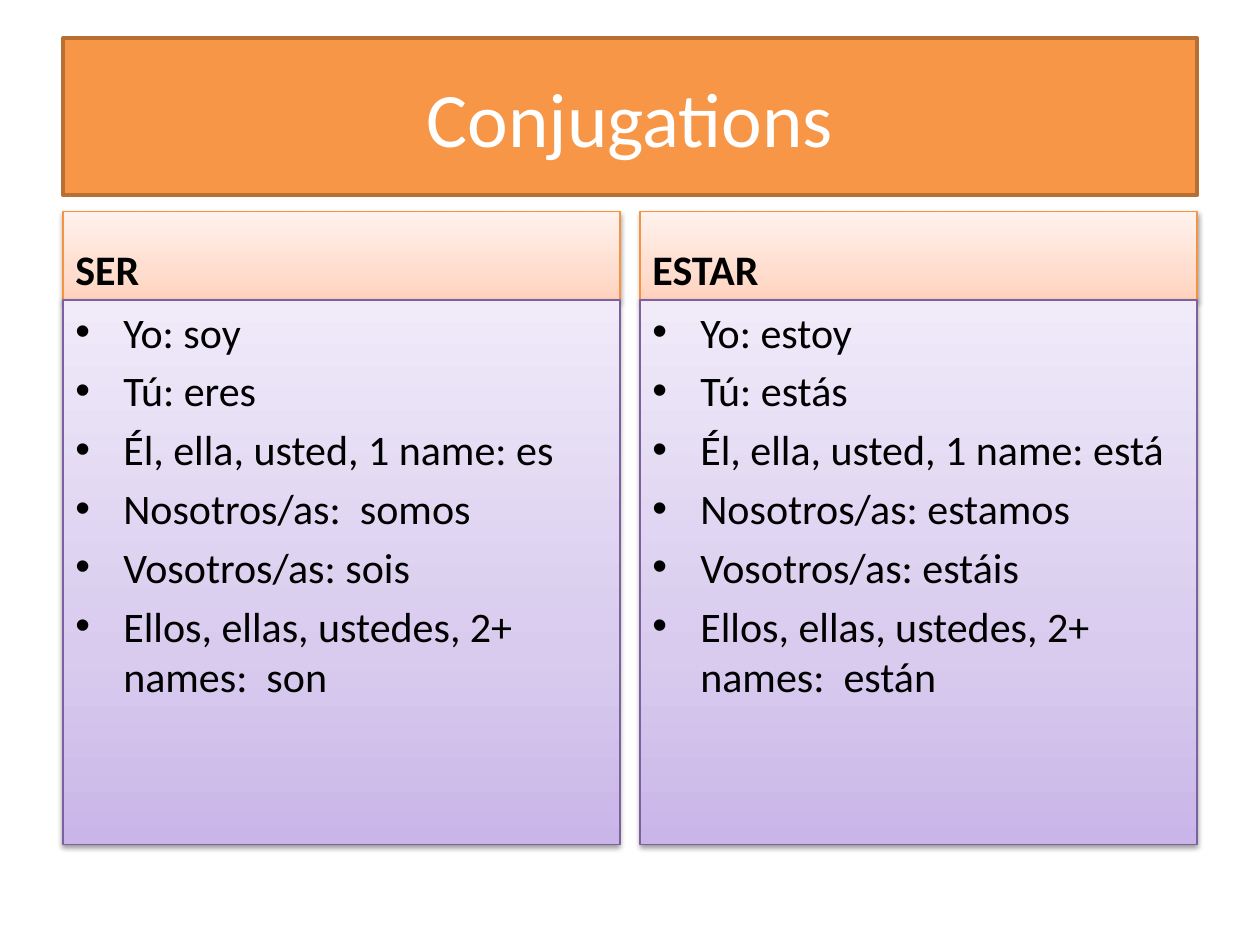
import pptx
import pptx.dml.color
import pptx.enum.shapes
import pptx.enum.text
import pptx.oxml
import pptx.oxml.ns
import pptx.util

Inches = pptx.util.Inches
Pt = pptx.util.Pt
RGBColor = pptx.dml.color.RGBColor
ALIGN = pptx.enum.text.PP_ALIGN
ANCHOR = pptx.enum.text.MSO_ANCHOR

WHITE = RGBColor(0xFF, 0xFF, 0xFF)
BLACK = RGBColor(0x00, 0x00, 0x00)
ORANGE = RGBColor(0xF7, 0x96, 0x46)
BROWN = RGBColor(0xB7, 0x6F, 0x34)
HEADING_LINE = RGBColor(0xF6, 0x92, 0x40)
LIST_LINE = RGBColor(0x7D, 0x60, 0xA0)

# Gradient colours from bottom to top
GRADIENT_STOPS = (0, 35, 100)
PEACH = (RGBColor(0xFF, 0xD2, 0xBD), RGBColor(0xFF, 0xDE, 0xD0), RGBColor(0xFF, 0xF2, 0xED))
LILAC = (RGBColor(0xC9, 0xB5, 0xE8), RGBColor(0xD8, 0xCB, 0xEE), RGBColor(0xF0, 0xEA, 0xF9))

FONT = "Calibri"
MARGIN = 0.5
COLUMN_WIDTH = 4.42
COLUMN_STEP = 4.58
HEADING_TOP = 1.68
HEADING_HEIGHT = 0.7
LIST_HEIGHT = 4.32

CONJUGATIONS = {
    "SER": [
        "Yo: soy",
        "Tú: eres",
        "Él, ella, usted, 1 name: es",
        "Nosotros/as:  somos",
        "Vosotros/as: sois",
        "Ellos, ellas, ustedes, 2+ names:  son",
    ],
    "ESTAR": [
        "Yo: estoy",
        "Tú: estás",
        "Él, ella, usted, 1 name: está",
        "Nosotros/as: estamos",
        "Vosotros/as: estáis",
        "Ellos, ellas, ustedes, 2+ names:  están",
    ],
}


def append_xml(parent, xml):
    """Append a DrawingML fragment to parent."""
    namespace = pptx.oxml.ns.nsdecls("a")
    parent.append(pptx.oxml.parse_xml(xml.replace(" ", f" {namespace} ", 1)))


def add_box(slide, left, top, width, height, line_color, line_width):
    shape = slide.shapes.add_shape(
        pptx.enum.shapes.MSO_SHAPE.RECTANGLE,
        Inches(left), Inches(top), Inches(width), Inches(height))
    shape.shadow.inherit = False
    shape.line.color.rgb = line_color
    shape.line.width = Pt(line_width)
    return shape


def add_gradient_box(slide, left, top, width, height, colors, line_color):
    """Add a box with a vertical gradient and a soft shadow below it."""
    shape = add_box(slide, left, top, width, height, line_color, 0.75)
    shape.fill.gradient()
    shape.fill.gradient_angle = 90
    properties = shape._element.spPr
    stops = properties.find(".//" + pptx.oxml.ns.qn("a:gsLst"))
    stops.clear()
    for position, color in zip(GRADIENT_STOPS, colors):
        append_xml(stops, f'<a:gs pos="{position * 1000}"><a:srgbClr val="{color}"/></a:gs>')
    append_xml(
        properties.find(pptx.oxml.ns.qn("a:effectLst")),
        f'<a:outerShdw blurRad="{Pt(3.1)}" dist="{Pt(1.6)}" dir="5400000" rotWithShape="0">'
        '<a:srgbClr val="000000"><a:alpha val="38000"/></a:srgbClr></a:outerShdw>')
    return shape


def write_text(shape, lines, size=24, color=BLACK, bold=False, align=ALIGN.LEFT,
               anchor=ANCHOR.TOP, space_before=20, bullet=False):
    """Write one paragraph per line; space_before is a percentage."""
    frame = shape.text_frame
    frame.word_wrap = True
    frame.vertical_anchor = anchor
    for index, line in enumerate(lines):
        paragraph = frame.paragraphs[0] if index == 0 else frame.add_paragraph()
        paragraph.alignment = align
        run = paragraph.add_run()
        run.text = line
        run.font.name = FONT
        run.font.size = Pt(size)
        run.font.bold = bold
        run.font.color.rgb = color
        properties = paragraph._p.get_or_add_pPr()
        append_xml(properties, f'<a:spcBef ><a:spcPct val="{space_before * 1000}"/></a:spcBef>')
        if bullet:
            indent = Inches(0.38)
            properties.set("marL", str(indent))
            properties.set("indent", str(-indent))
            append_xml(properties, '<a:buFont typeface="Arial"/>')
            append_xml(properties, '<a:buChar char="•"/>')


def add_title(slide, text):
    shape = add_box(slide, MARGIN, 0.3, 9, 1.25, BROWN, 2)
    shape.fill.solid()
    shape.fill.fore_color.rgb = ORANGE
    write_text(shape, [text], size=44, color=WHITE, align=ALIGN.CENTER,
               anchor=ANCHOR.MIDDLE, space_before=0)


def add_verb_column(slide, left, verb, forms):
    heading = add_gradient_box(slide, left, HEADING_TOP, COLUMN_WIDTH, HEADING_HEIGHT,
                               PEACH, HEADING_LINE)
    write_text(heading, [verb], bold=True, anchor=ANCHOR.BOTTOM)
    form_list = add_gradient_box(slide, left, HEADING_TOP + HEADING_HEIGHT, COLUMN_WIDTH,
                                 LIST_HEIGHT, LILAC, LIST_LINE)
    write_text(form_list, forms, bullet=True)


def main():
    presentation = pptx.Presentation()
    presentation.slide_width = Inches(10)
    presentation.slide_height = Inches(7.5)
    slide = presentation.slides.add_slide(presentation.slide_layouts[6])

    # Title banner
    add_title(slide, "Conjugations")

    # One column per verb
    for index, (verb, forms) in enumerate(CONJUGATIONS.items()):
        add_verb_column(slide, MARGIN + index * COLUMN_STEP, verb, forms)

    presentation.save("out.pptx")


if __name__ == "__main__":
    main()
